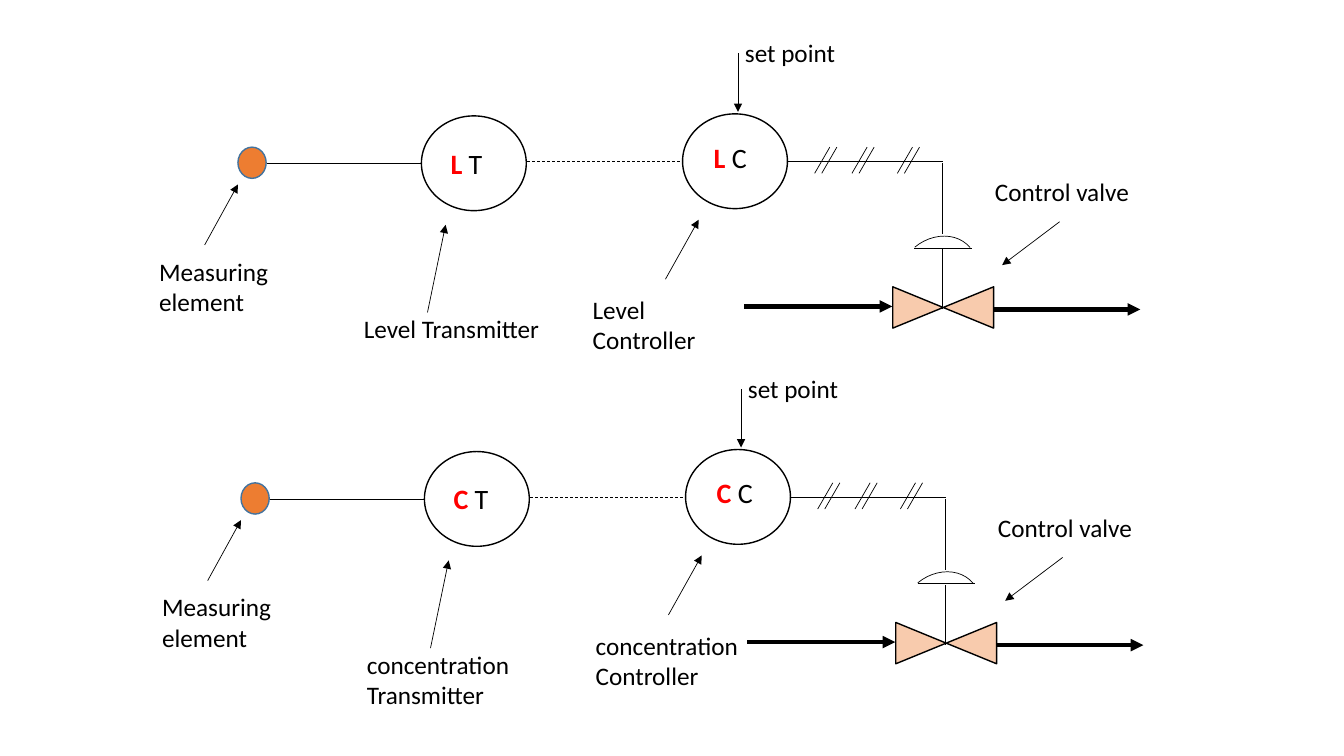
from lxml.etree import SubElement
from pptx import Presentation
from pptx.dml.color import RGBColor
from pptx.enum.dml import MSO_LINE
from pptx.enum.shapes import MSO_CONNECTOR, MSO_SHAPE
from pptx.oxml.ns import qn
from pptx.util import Inches, Pt

BLACK = RGBColor(0, 0, 0)
WHITE = RGBColor(255, 255, 255)
RED = RGBColor(255, 0, 0)
ORANGE = RGBColor(0xED, 0x7D, 0x31)
BLUE = RGBColor(0x43, 0x73, 0x9E)
PEACH = RGBColor(0xF8, 0xCB, 0xAD)

LABEL_WIDTH = 1.94
CIRCLE_SIZE = (1.04, 0.94)


class Loop:
    def __init__(self, page, left, top):
        self.shapes = page.shapes.add_group_shape().shapes
        self.left = left
        self.top = top

    def place(self, x, y):
        return Inches(self.left + x), Inches(self.top + y)

    def line(self, start, end, width=0.5, arrow=False, dashed=False):
        connector = self.shapes.add_connector(
            MSO_CONNECTOR.STRAIGHT, *self.place(*start), *self.place(*end))
        connector.line.color.rgb = BLACK
        connector.line.width = Pt(width)
        if dashed:
            connector.line.dash_style = MSO_LINE.DASH
        properties = connector._element.spPr
        if arrow:
            SubElement(properties.find(qn("a:ln")), qn("a:tailEnd"), type="triangle")
        SubElement(properties, qn("a:effectLst"))

    def shape(self, kind, corner, size, fill=None, outline=BLACK, width=1, rotation=0):
        shape = self.shapes.add_shape(
            kind, *self.place(*corner), Inches(size[0]), Inches(size[1]))
        shape.shadow.inherit = False
        shape.rotation = rotation
        if fill is None:
            shape.fill.background()
        else:
            shape.fill.solid()
            shape.fill.fore_color.rgb = fill
        shape.line.color.rgb = outline
        shape.line.width = Pt(width)

    def text_frame(self, corner, width, height):
        box = self.shapes.add_textbox(
            *self.place(*corner), Inches(width), Inches(height))
        box.text_frame.word_wrap = True
        return box.text_frame

    def label(self, text, corner, width=LABEL_WIDTH, height=0.71):
        frame = self.text_frame(corner, width, height)
        frame.text = text
        for para in frame.paragraphs:
            para.font.size = Pt(18)
            para.font.name = "Calibri"
            para.font.color.rgb = BLACK

    def tag(self, variable, role, corner):
        para = self.text_frame(corner, 0.65, 0.44).paragraphs[0]
        para.font.size = Pt(20)
        para.font.name = "Calibri"
        for text, color, bold in ((variable, RED, True), (f" {role}", BLACK, False)):
            span = para.add_run()
            span.text = text
            span.font.color.rgb = color
            span.font.bold = bold


def draw_instruments(loop, letter):
    loop.shape(MSO_SHAPE.OVAL, (0.88, 1.14), (0.28, 0.31), ORANGE, BLUE)
    loop.line((1.17, 1.3), (2.7, 1.3))
    loop.shape(MSO_SHAPE.OVAL, (2.7, 0.83), CIRCLE_SIZE, WHITE)
    loop.line((3.75, 1.28), (5.29, 1.28), dashed=True)
    loop.shape(MSO_SHAPE.OVAL, (5.29, 0.81), CIRCLE_SIZE, WHITE)
    loop.tag(letter, "T", (2.89, 1.08))
    loop.tag(letter, "C", (5.5, 1.02))


def draw_signal(loop):
    loop.line((6.33, 1.28), (7.87, 1.28))
    for pair in (6.75, 7.12, 7.57):
        for x in (pair, pair + 0.07):
            loop.line((x, 1.14), (x - 0.15, 1.4))
    loop.line((7.87, 1.3), (7.87, 2))


def draw_valve(loop):
    loop.shape(MSO_SHAPE.FLOWCHART_COLLATE, (7.67, 2.23), (0.41, 1), PEACH, rotation=270)
    loop.line((7.87, 2.75), (7.87, 2.15))
    loop.line((7.59, 2.14), (8.16, 2.14))
    loop.shape(MSO_SHAPE.ARC, (7.4, 2.05), (0.84, 0.71), width=0.5, rotation=320.2)
    loop.line((5.9, 2.72), (7.37, 2.72), width=3, arrow=True)
    loop.line((8.37, 2.75), (9.83, 2.75), width=3, arrow=True)


def draw_labels(loop, transmitter, controller):
    loop.label("Measuring element", (0, 2.17))
    loop.label(controller, (4.3, 2.55))
    loop.label(transmitter, (2.03, 2.74))
    loop.label("Control valve", (8.29, 1.38), height=0.4)
    loop.label("set point", (5.81, 0), width=1.14, height=0.4)
    for start, end in (
        ((0.55, 2.11), (0.88, 1.51)),
        ((5.12, 2.45), (5.45, 1.86)),
        ((2.76, 2.78), (2.94, 1.91)),
        ((9.03, 1.88), (8.46, 2.31)),
        ((5.84, 0.21), (5.84, 0.79)),
    ):
        loop.line(start, end, arrow=True)


def draw_control_loop(page, left, top, letter, variable):
    loop = Loop(page, left, top)
    draw_instruments(loop, letter)
    draw_signal(loop)
    draw_valve(loop)
    draw_labels(loop, f"{variable} Transmitter", f"{variable}\nController")


def main():
    deck = Presentation()
    deck.slide_width = Inches(13.33)
    deck.slide_height = Inches(7.5)
    page = deck.slides.add_slide(deck.slide_layouts[6])
    draw_control_loop(page, 1.48, 0.32, "L", "Level")
    draw_control_loop(page, 1.51, 3.65, "C", "concentration")
    deck.save("out.pptx")


if __name__ == "__main__":
    main()
